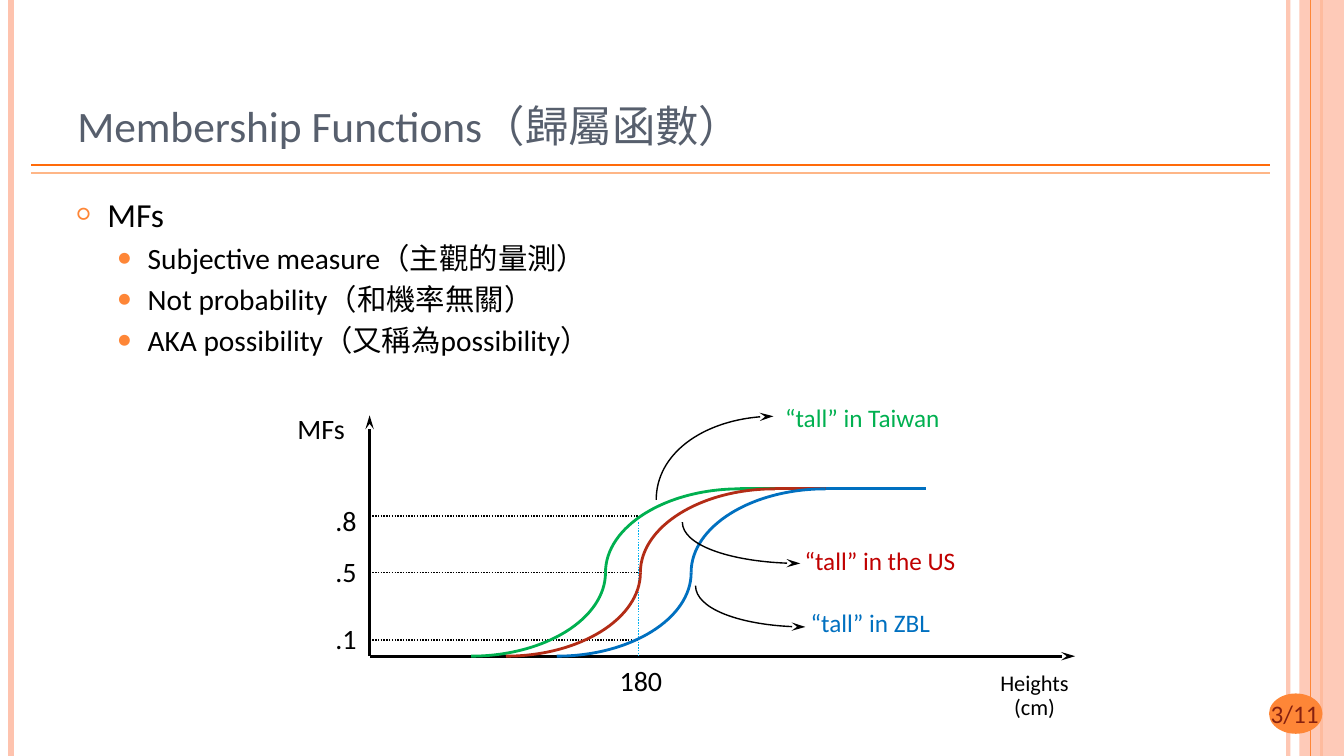
import lxml.etree
import pptx
import pptx.dml.color
import pptx.enum.dml
import pptx.enum.shapes
import pptx.enum.text
import pptx.oxml.ns
import pptx.util

SHAPE = pptx.enum.shapes.MSO_SHAPE
ALIGN = pptx.enum.text.PP_ALIGN
FIT = pptx.enum.text.MSO_AUTO_SIZE
DOTTED = pptx.enum.dml.MSO_LINE.ROUND_DOT


def rgb(value):
    return pptx.dml.color.RGBColor.from_string(value)


def add_xml(parent, tag, **attrs):
    return lxml.etree.SubElement(parent, pptx.oxml.ns.qn(tag), attrs)


class Deck:
    columns, rows = 80, 45
    font = "Calibri"
    black, orange, pink = "000000", "FE8637", "FEC3AE"

    def __init__(self):
        self.prs = pptx.Presentation()
        self.prs.slide_width = pptx.util.Inches(13.333)
        self.prs.slide_height = pptx.util.Inches(7.5)
        self.s = self.prs.slides.add_slide(self.prs.slide_layouts[5])

    def x(self, column):
        return pptx.util.Emu(round(self.prs.slide_width * column / self.columns))

    def y(self, row):
        return pptx.util.Emu(round(self.prs.slide_height * row / self.rows))

    def box(self, left, top, width, height):
        return self.x(left), self.y(top), self.x(width), self.y(height)

    def style_font(self, p, size, color):
        p.font.name = self.font
        p.font.size = pptx.util.Pt(size)
        p.font.color.rgb = rgb(color)

    def style_line(self, sp, color, width, dash=None, arrow=False):
        sp.line.color.rgb = rgb(color)
        sp.line.width = pptx.util.Pt(width)
        if dash:
            sp.line.dash_style = dash
        if arrow:
            ln = sp._element.spPr.find(pptx.oxml.ns.qn("a:ln"))
            add_xml(ln, "a:tailEnd", type="stealth", w="med", len="lg")

    def set_alpha(self, sp, percent):
        for color in sp._element.spPr.iter(pptx.oxml.ns.qn("a:srgbClr")):
            add_xml(color, "a:alpha", val=str(percent * 1000))

    def title(self, at, text, size, color):
        sp = self.s.shapes.title
        sp.left, sp.top, sp.width, sp.height = self.box(*at)
        tf = sp.text_frame
        tf.text = text
        tf.auto_size = FIT.NONE
        tf.vertical_anchor = pptx.enum.text.MSO_ANCHOR.BOTTOM
        p = tf.paragraphs[0]
        p.alignment = ALIGN.LEFT
        self.style_font(p, size, color)

    def line(self, start, end, color, width, dash=None, arrow=False):
        sp = self.s.shapes.add_connector(
            pptx.enum.shapes.MSO_CONNECTOR.STRAIGHT,
            self.x(start[0]), self.y(start[1]), self.x(end[0]), self.y(end[1]))
        self.style_line(sp, color, width, dash, arrow)
        add_xml(sp._element.spPr, "a:effectLst")
        return sp

    def shape(self, kind, at, color):
        sp = self.s.shapes.add_shape(kind, *self.box(*at))
        sp.shadow.inherit = False
        sp.fill.solid()
        sp.fill.fore_color.rgb = rgb(color)
        sp.line.fill.background()
        return sp

    def quarter(self, start, end, color, width, arrow=False):
        builder = self.s.shapes.build_freeform(self.x(start[0]), self.y(start[1]))
        builder.add_line_segments([(self.x(end[0]), self.y(end[1]))], close=False)
        sp = builder.convert_to_shape()
        sp.shadow.inherit = False
        sp.fill.background()
        self.style_line(sp, color, width, arrow=arrow)
        outline = next(sp._element.spPr.iter(pptx.oxml.ns.qn("a:path")))
        (x0, y0), (x1, y1) = [(int(pt.get("x")), int(pt.get("y")))
                              for pt in outline.iter(pptx.oxml.ns.qn("a:pt"))]
        outline.remove(outline[-1])
        curve = add_xml(outline, "a:cubicBezTo")
        bend = 0.55
        for px, py in [(x0, y0 + bend * (y1 - y0)), (x1 - bend * (x1 - x0), y1), (x1, y1)]:
            add_xml(curve, "a:pt", x=str(round(px)), y=str(round(py)))

    def label(self, at, text, size, color=black, align=ALIGN.CENTER, spacing=0.65):
        tf = self.s.shapes.add_textbox(*self.box(*at)).text_frame
        tf.word_wrap = False
        tf.auto_size = FIT.SHAPE_TO_FIT_TEXT
        for i, words in enumerate(text.split("\n")):
            p = tf.add_paragraph() if i else tf.paragraphs[0]
            p.text = words
            p.alignment = align
            p.line_spacing = spacing
            if i:
                p.space_before = pptx.util.Pt(0.3 * size)
            self.style_font(p, size, color)

    def bullets(self, at, items):
        levels = [("○", 70, 0.3, 24), ("●", 80, 0.7, 21)]
        tf = self.s.shapes.add_textbox(*self.box(*at)).text_frame
        tf.word_wrap = True
        for i, (level, words) in enumerate(items):
            mark, share, margin, size = levels[level]
            p = tf.add_paragraph() if i else tf.paragraphs[0]
            p.text = words
            p.level = level
            pPr = p._p.get_or_add_pPr()
            pPr.set("marL", str(pptx.util.Inches(margin)))
            pPr.set("indent", str(pptx.util.Inches(-0.3)))
            add_xml(add_xml(pPr, "a:buClr"), "a:srgbClr", val=self.orange)
            add_xml(pPr, "a:buSzPct", val=str(share * 1000))
            add_xml(pPr, "a:buFont", typeface=self.font)
            add_xml(pPr, "a:buChar", char=mark)
            if i:
                p.space_before = pptx.util.Pt(0.2 * size)
            self.style_font(p, size, self.black)

    def frame(self):
        edge = self.line((76.68, 0), (76.68, 45), self.pink, 3)
        self.set_alpha(edge, 93)
        self.line((0.66, 0), (0.66, 45), self.pink, 4.5)
        self.line((78.66, 0), (78.66, 45), self.orange, 1.5)
        band = self.shape(SHAPE.RECTANGLE, (77.34, 0, 2.66, 45), self.pink)
        self.set_alpha(band, 87)
        self.line((78, 0), (78, 45), self.orange, 0.75)
        for row, color in [(9.84, "FF6B0A"), (10.32, "FEB687")]:
            self.line((1.86, row), (75.6, row), color, 1.25)
        self.shape(SHAPE.OVAL, (75.54, 41.28, 3.18, 2.4), self.orange)
        self.label((73.44, 41.28, 7.26, 2.4), "3/11", 18, "862110", spacing=1)

    def chart(self):
        axis, base, middle, top, height = 22, 39.06, 34.08, 29.1, 38
        self.line((axis, base), (64, base), self.black, 2, arrow=True)
        self.line((axis, base), (axis, 24.72), self.black, 2, arrow=True)
        self.label((17.04, 24.82, 4.14, 2.04), "MFs", 20)
        self.label((58.88, 40.02, 5.4, 3.3), "Heights\n(cm)", 16)
        self.label((36.26, 39.82, 3.78, 2.04), "180", 20)
        for text, row, label_row in [(".8", 30.72, 30.3), (".5", middle, 33.34),
                                     (".1", 38.1, 37.32)]:
            self.line((axis, row), (height, row), self.black, 1, DOTTED)
            self.label((19.34, label_row, 2.52, 2.04), text, 20)
        self.line((height, 31.08), (height, base), "00B0F0", 1, DOTTED)

        for center, color in [(36.04, "00B050"), (38.12, "B32C16"), (41.14, "0070C0")]:
            self.quarter((center, middle), (center - 8, base), color, 2)
            self.quarter((center, middle), (center + 8, top), color, 2)
            self.line((center + 8, top), (center + 14, top), color, 2)

        callouts = [
            ((39.06, 29.76), (46.04, 24.78), (46.14, 23.64, 10.5, 2.4),
             "“tall” in Taiwan", "00B050"),
            ((40.62, 31.08), (47.64, 33.54), (47.3, 32.16, 10.32, 2.4),
             "“tall” in the US", "C00000"),
            ((41.4, 34.86), (47.94, 37.32), (47.66, 35.88, 8.88, 2.4),
             "“tall” in ZBL", "0070C0"),
        ]
        for start, tip, at, text, color in callouts:
            self.quarter(start, tip, self.black, 1, arrow=True)
            self.label(at, text, 18, color, ALIGN.LEFT, 1)


def main():
    deck = Deck()
    deck.frame()
    deck.title((4, 1.8, 65.34, 7.5), "Membership Functions（歸屬函數）", 31, "575F6D")
    deck.bullets((4, 11.22, 65.34, 31.26), [
        (0, "MFs"),
        (1, "Subjective measure（主觀的量測）"),
        (1, "Not probability（和機率無關）"),
        (1, "AKA possibility（又稱為possibility）"),
    ])
    deck.chart()
    deck.prs.save("out.pptx")


if __name__ == "__main__":
    main()
